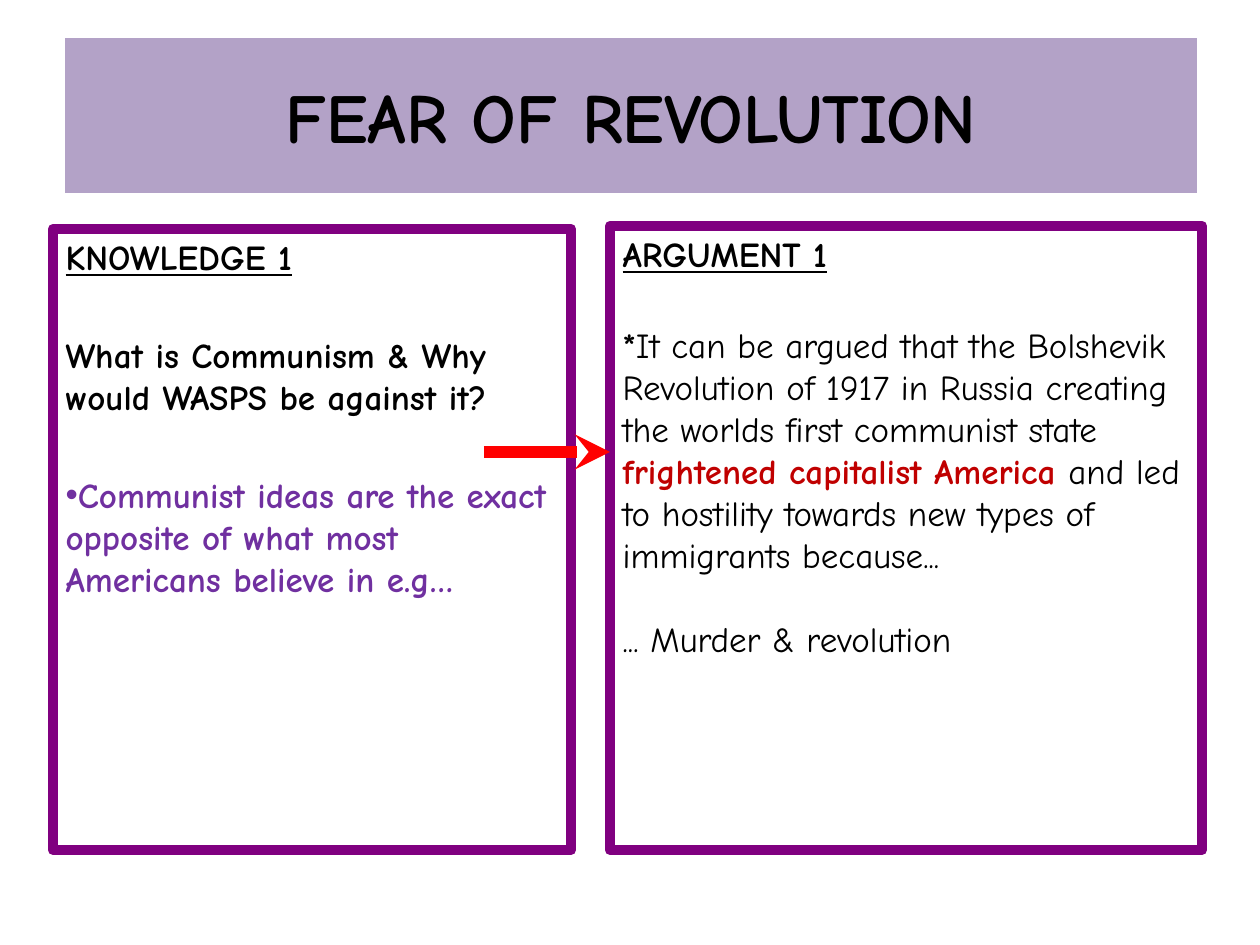
from lxml import etree
from pptx import Presentation
from pptx.dml.color import RGBColor
from pptx.enum.shapes import MSO_CONNECTOR
from pptx.enum.text import MSO_ANCHOR, MSO_AUTO_SIZE, PP_ALIGN
from pptx.oxml.ns import qn
from pptx.util import Emu, Pt

STRAIGHT = MSO_CONNECTOR.STRAIGHT
TOP, MIDDLE = MSO_ANCHOR.TOP, MSO_ANCHOR.MIDDLE
LEFT, CENTER = PP_ALIGN.LEFT, PP_ALIGN.CENTER
NO_AUTOFIT = MSO_AUTO_SIZE.NONE
PX = 914400 // 126  # one px in EMU

THEME = {
    "font": "Comic Neue", "title_size": Pt(40), "body_size": Pt(20),
    "text": RGBColor(0x00, 0x00, 0x00), "white": RGBColor(0xFF, 0xFF, 0xFF),
    "banner": RGBColor(0xB3, 0xA2, 0xC7), "frame": RGBColor(0x80, 0x00, 0x80),
    "idea": RGBColor(0x70, 0x30, 0xA0), "stress": RGBColor(0xC0, 0x00, 0x00),
    "arrow": RGBColor(0xFF, 0x00, 0x00),
}
BOLD = {"bold": True}
PLAIN = {"bold": False}
HEADING = {"bold": True, "underline": True}


def place(shape, box, line_color, line_width, anchor):
    for name, value in zip(("left", "top", "width", "height"), box):
        setattr(shape, name, Emu(value * PX))
    shape.line.color.rgb = line_color
    shape.line.width = Pt(line_width)
    frame = shape.text_frame
    for name, value in {"word_wrap": True, "auto_size": NO_AUTOFIT,
                        "vertical_anchor": anchor}.items():
        setattr(frame, name, value)
    return frame


def write_run(paragraph, text, size, style, color="text"):
    run = paragraph.add_run()
    run.text = text
    run.font.color.rgb = THEME[color]
    for name, value in {"name": THEME["font"], "size": size, **style}.items():
        setattr(run.font, name, value)


presentation = Presentation()
presentation.slide_width = Emu(1260 * PX)
presentation.slide_height = Emu(945 * PX)
slide = presentation.slides.add_slide(presentation.slide_layouts[3])
title, knowledge, argument = slide.placeholders

# Title banner
title_frame = place(title, (64, 37, 1134, 157), THEME["white"], 0.75, MIDDLE)
title.fill.solid()
title.fill.fore_color.rgb = THEME["banner"]
title_paragraph = title_frame.paragraphs[0]
title_paragraph.alignment = CENTER
write_run(title_paragraph, "FEAR OF REVOLUTION", THEME["title_size"], BOLD)

# Framed panels: each paragraph is space before, bullet, runs
panels = [
    (knowledge, (53, 229, 518, 621), [
        (0, None, [("KNOWLEDGE 1", HEADING)]),
        (32, None, [("What is Communism & Why would WASPS be against it?", BOLD)]),
        (32, "•", [("Communist ideas are the exact opposite of what most "
                    "Americans believe in e.g…", BOLD, "idea")]),
    ]),
    (argument, (610, 226, 592, 624), [
        (0, None, [("ARGUMENT 1", HEADING)]),
        (28, None, [
            ("*", BOLD),
            ("It can be argued that the Bolshevik Revolution of 1917 in Russia "
             "creating the worlds first communist state ", PLAIN),
            ("frightened capitalist America ", BOLD, "stress"),
            ("and led to hostility towards new types of immigrants because...", PLAIN),
        ]),
        (24, None, [("... Murder & revolution", PLAIN)]),
    ]),
]
for panel, box, paragraphs in panels:
    frame = place(panel, box, THEME["frame"], 6, TOP)
    for index, (space, bullet, runs) in enumerate(paragraphs):
        paragraph = frame.add_paragraph() if index else frame.paragraphs[0]
        paragraph.alignment = LEFT
        paragraph.space_before = Pt(space)
        properties = paragraph._p.get_or_add_pPr()
        properties.set("marL", "0")
        properties.set("indent", "0")
        if bullet:
            etree.SubElement(properties, qn("a:buChar")).set("char", bullet)
        else:
            etree.SubElement(properties, qn("a:buNone"))
        for run in runs:
            write_run(paragraph, run[0], THEME["body_size"], *run[1:])

# Arrow from knowledge to argument
arrow = slide.shapes.add_connector(
    STRAIGHT, *(Emu(value * PX) for value in (484, 452, 610, 452)))
arrow.line.color.rgb = THEME["arrow"]
arrow.line.width = Pt(6.75)
etree.SubElement(arrow.line._get_or_add_ln(), qn("a:tailEnd")).set("type", "stealth")
etree.SubElement(arrow._element.spPr, qn("a:effectLst"))

presentation.save("out.pptx")
